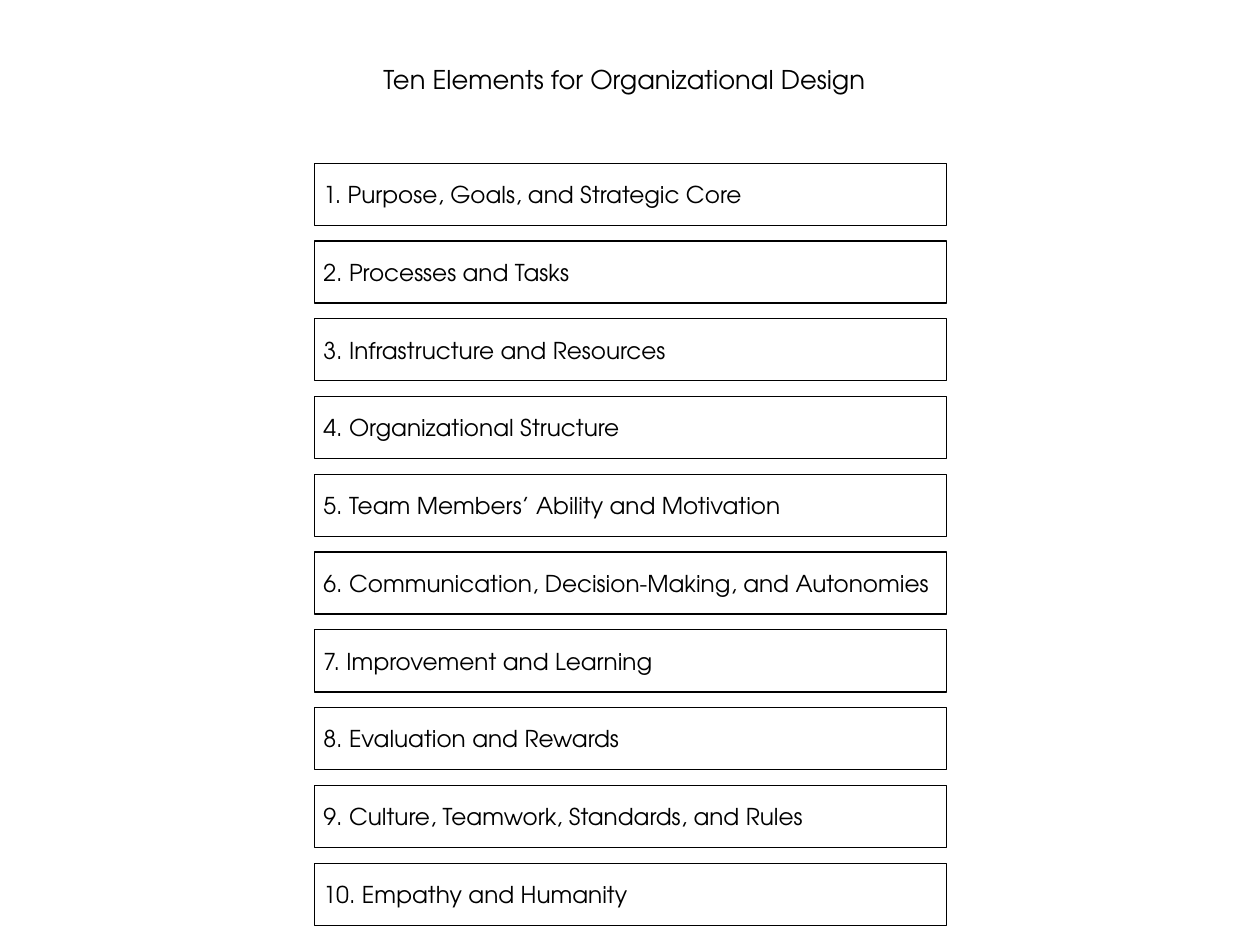
"""Build a slide that lists ten elements for organizational design."""
import dataclasses

import pptx
import pptx.dml.color
import pptx.enum.shapes
import pptx.enum.text
import pptx.shapes.autoshape
import pptx.slide
import pptx.text.text
import pptx.util

Cm = pptx.util.Cm
Color = pptx.dml.color.RGBColor
Align = pptx.enum.text.PP_ALIGN
Anchor = pptx.enum.text.MSO_ANCHOR


@dataclasses.dataclass(frozen=True)
class Theme:
    face: str = "TeX Gyre Adventor"
    ink: Color = Color(0, 0, 0)
    paper: Color = Color(255, 255, 255)
    head: pptx.util.Pt = pptx.util.Pt(20)
    body: pptx.util.Pt = pptx.util.Pt(18)
    edge: pptx.util.Pt = pptx.util.Pt(1)


@dataclasses.dataclass(frozen=True)
class Box:
    label: str
    top: float
    left: float = 8.61
    width: float = 17.32
    height: float = 1.7


THEME = Theme()
FIRST = 4.47
PITCH = 2.13
LABELS = (
    "Purpose, Goals, and Strategic Core",
    "Processes and Tasks",
    "Infrastructure and Resources",
    "Organizational Structure",
    "Team Members’ Ability and Motivation",
    "Communication, Decision-Making, and Autonomies",
    "Improvement and Learning",
    "Evaluation and Rewards",
    "Culture, Teamwork, Standards, and Rules",
    "Empathy and Humanity",
)


def write(frame: pptx.text.text.TextFrame, text: str, size: pptx.util.Pt, align: Align) -> None:
    frame.text = text
    frame.vertical_anchor = Anchor.MIDDLE
    line = frame.paragraphs[0]
    line.alignment = align
    line.font.name = THEME.face
    line.font.size = size
    line.font.color.rgb = THEME.ink


def draw_title(slide: pptx.slide.Slide, text: str) -> None:
    title = slide.shapes.title
    title.left, title.top = Cm(10.16), Cm(1.6)
    title.width, title.height = Cm(13.89), Cm(1.12)
    write(title.text_frame, text, THEME.head, Align.CENTER)
    title.text_frame.word_wrap = False
    title.text_frame.auto_size = pptx.enum.text.MSO_AUTO_SIZE.SHAPE_TO_FIT_TEXT


def draw_box(slide: pptx.slide.Slide, box: Box) -> pptx.shapes.autoshape.Shape:
    shape = slide.shapes.add_shape(
        pptx.enum.shapes.MSO_SHAPE.RECTANGLE,
        Cm(box.left), Cm(box.top), Cm(box.width), Cm(box.height),
    )
    shape.shadow.inherit = False
    shape.fill.solid()
    shape.fill.fore_color.rgb = THEME.paper
    shape.line.color.rgb = THEME.ink
    shape.line.width = THEME.edge
    write(shape.text_frame, box.label, THEME.body, Align.LEFT)
    return shape


def main() -> None:
    deck = pptx.Presentation()
    deck.slide_width, deck.slide_height = Cm(34.52), Cm(25.88)
    slide = deck.slides.add_slide(deck.slide_layouts.get_by_name("Title Only"))
    draw_title(slide, "Ten Elements for Organizational Design")
    for index, label in enumerate(LABELS):
        draw_box(slide, Box(f"{index + 1}. {label}", FIRST + index * PITCH))
    deck.save("out.pptx")


if __name__ == "__main__":
    main()
